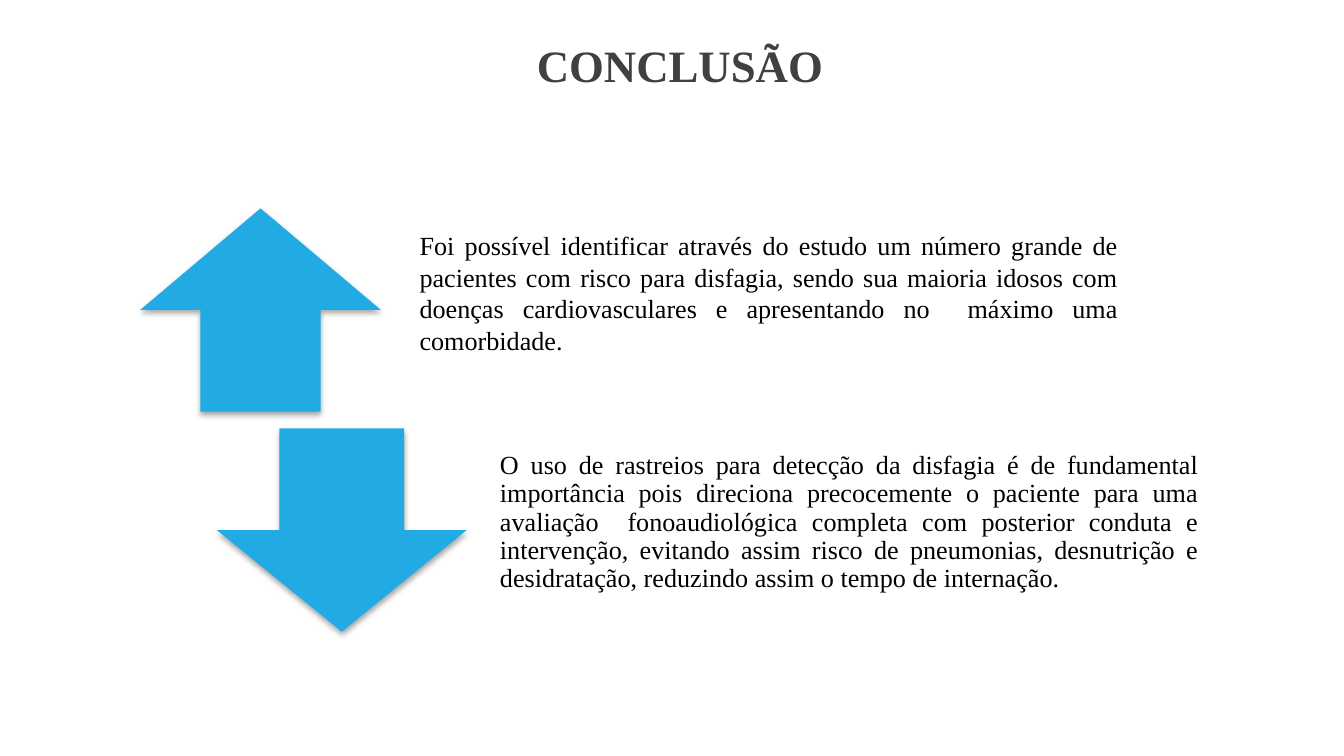
import pptx
import pptx.util
import pptx.dml.color
import pptx.enum.shapes
import pptx.enum.text
import pptx.oxml.ns
import lxml.etree

Cm = pptx.util.Cm
Pt = pptx.util.Pt
Kind = pptx.enum.shapes.MSO_SHAPE
Align = pptx.enum.text.PP_ALIGN
COLORS = {"title": "404040", "body": "000000", "arrow": "22AAE4", "shade": "000000"}


def color(name):
    return pptx.dml.color.RGBColor.from_string(COLORS[name])


def apply(target, values):
    for name, value in values.items():
        setattr(target, name, value)


class Deck:
    face = "Times New Roman"

    def __init__(self, wide, high):
        self.show = pptx.Presentation()
        apply(self.show, {"slide_width": Cm(wide), "slide_height": Cm(high)})
        self.slide = self.show.slides.add_slide(self.show.slide_layouts[6])

    def text(self, box, words, size, tint, align, bold=False, space=1.0, low=0.28):
        frame = self.slide.shapes.add_textbox(*map(Cm, box)).text_frame
        apply(frame, {
            "word_wrap": True,
            "vertical_anchor": pptx.enum.text.MSO_ANCHOR.MIDDLE,
            "margin_left": Cm(0.28),
            "margin_right": Cm(0.28),
            "margin_top": 0,
            "margin_bottom": Cm(low),
        })
        para = frame.paragraphs[0]
        apply(para, {"alignment": align, "line_spacing": space})
        run = para.add_run()
        run.text = words
        apply(run.font, {"name": self.face, "size": Pt(size), "bold": bold})
        run.font.color.rgb = color(tint)

    def arrow(self, kind, box):
        shape = self.slide.shapes.add_shape(kind, *map(Cm, box))
        shape.fill.solid()
        shape.fill.fore_color.rgb = color("arrow")
        shape.line.fill.background()
        shape.shadow.inherit = False
        self.shade(shape)

    def shade(self, shape):
        name = pptx.oxml.ns.qn
        effect = shape.element.spPr.find(name("a:effectLst"))
        outer = lxml.etree.SubElement(
            effect, name("a:outerShdw"), blurRad=str(Pt(3.1)),
            dist=str(Pt(1.8)), dir="5400000", rotWithShape="0")
        tint = lxml.etree.SubElement(outer, name("a:srgbClr"), val=COLORS["shade"])
        lxml.etree.SubElement(tint, name("a:alpha"), val="35000")


def main():
    deck = Deck(25.4, 14.29)
    deck.text((0.3, 0, 25.1, 2.46), "CONCLUSÃO", 24, "title",
              Align.CENTER, bold=True, low=0)

    high = 3.84
    wide = 13.77
    rows = [
        (Kind.UP_ARROW, 2.65, 4.55, 7.65, 3.94, 1.0, 0.66,
         "Foi possível identificar através do estudo um número grande de "
         "pacientes com risco para disfagia, sendo sua maioria idosos com "
         "doenças cardiovasculares e apresentando no  máximo uma comorbidade."),
        (Kind.DOWN_ARROW, 4.1, 4.72, 9.17, 8.1, 0.9, 0.28,
         "O uso de rastreios para detecção da disfagia é de fundamental "
         "importância pois direciona precocemente o paciente para uma "
         "avaliação  fonoaudiológica completa com posterior conduta e "
         "intervenção, evitando assim risco de pneumonias, desnutrição e "
         "desidratação, reduzindo assim o tempo de internação."),
    ]
    for kind, left, span, start, top, space, low, words in rows:
        deck.arrow(kind, (left, top, span, high))
        deck.text((start, top, wide, high), words, 14, "body",
                  Align.JUSTIFY, space=space, low=low)
    deck.show.save("out.pptx")


if __name__ == "__main__":
    main()
